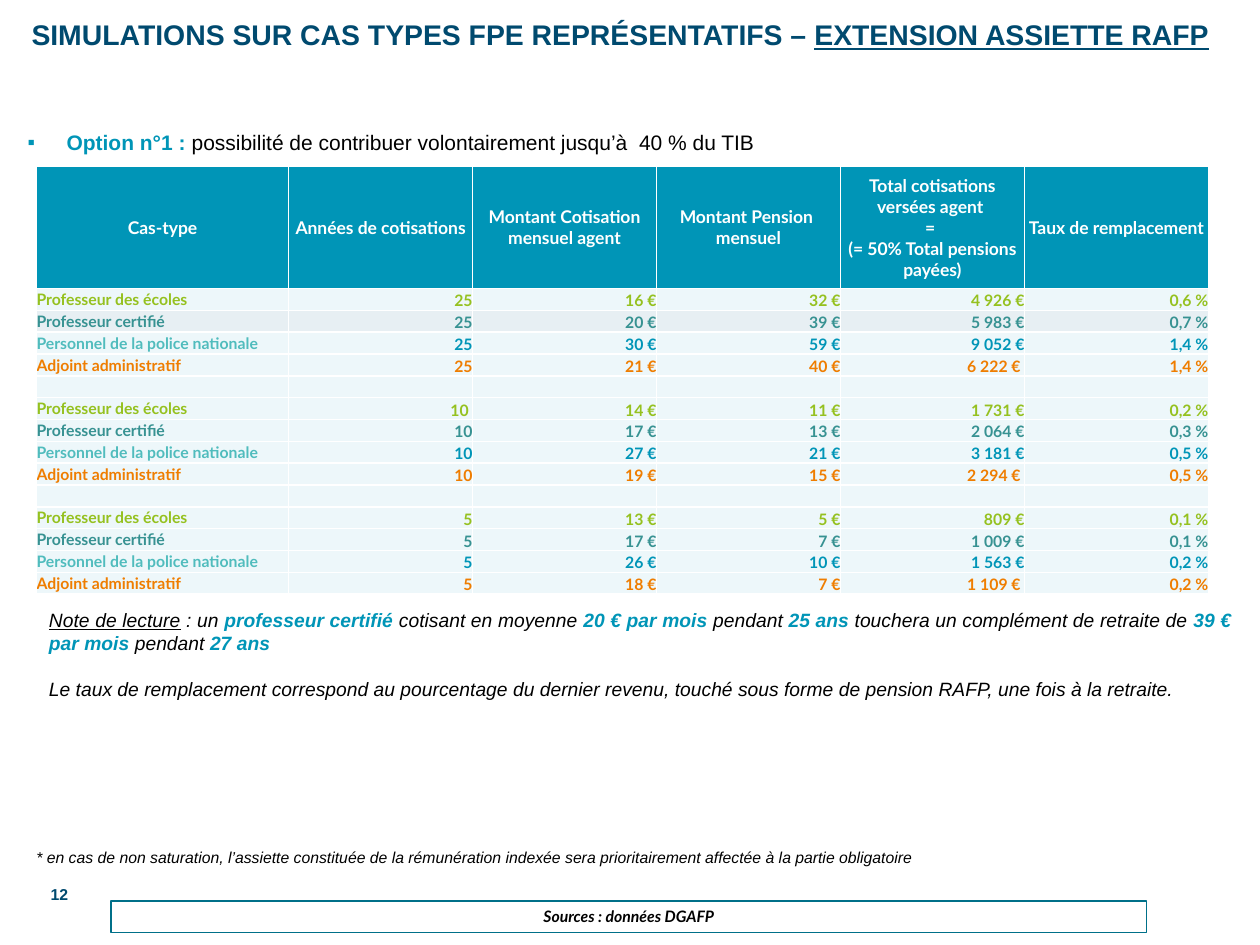
from lxml.etree import SubElement as Sub
from pptx import Presentation
from pptx.dml.color import RGBColor as RGB
from pptx.enum.shapes import MSO_SHAPE as Shape
from pptx.enum.text import MSO_ANCHOR as Anchor, MSO_AUTO_SIZE as Fit, PP_ALIGN as Align
from pptx.oxml import parse_xml
from pptx.oxml.ns import nsdecls, qn
from pptx.util import Inches, Pt

HUES = {"navy": "004A6F", "blue": "0095B7", "line": "007089", "black": "000000",
        "white": "FFFFFF", "pale": "EDF7FA", "grey": "E7EFF3", "lime": "95C11F",
        "green": "379292", "aqua": "50BCBD", "orange": "EF7D00"}

HEADS = ["Cas-type", "Années de cotisations", "Montant Cotisation mensuel agent",
         "Montant Pension \nmensuel",
         "Total cotisations versées agent \n= \n(= 50% Total pensions payées)",
         "Taux de remplacement"]

# Name, colour of the name, colour of the figures
JOBS = [("Professeur des écoles", "lime", "lime"),
        ("Professeur certifié", "green", "green"),
        ("Personnel de la police nationale", "aqua", "blue"),
        ("Adjoint administratif", "orange", "orange")]

# One group per length of contribution, one row per job
GROUPS = [
    [["25", "16 €", "32 €", "4 926 €", "0,6 %"],
     ["25", "20 €", "39 €", "5 983 €", "0,7 %"],
     ["25", "30 €", "59 €", "9 052 €", "1,4 %"],
     ["25", "21 €", "40 €", "6 222 € ", "1,4 %"]],
    [["10 ", "14 €", "11 €", "1 731 €", "0,2 %"],
     ["10", "17 €", "13 €", "2 064 €", "0,3 %"],
     ["10", "27 €", "21 €", "3 181 €", "0,5 %"],
     ["10", "19 €", "15 €", "2 294 € ", "0,5 %"]],
    [["5", "13 €", "5 €", "809 €", "0,1 %"],
     ["5", "17 €", "7 €", "1 009 €", "0,1 %"],
     ["5", "26 €", "10 €", "1 563 €", "0,2 %"],
     ["5", "18 €", "7 €", "1 109 € ", "0,2 %"]],
]

NOTE = [(" : un", False), (" professeur certifié ", True),
        ("cotisant en moyenne ", False), ("20 € par mois ", True),
        ("pendant ", False), ("25 ans ", True),
        ("touchera un complément de retraite de", False),
        (" 39 € par mois ", True), ("pendant ", False), ("27 ans", True)]


def rgb(hue):
    return RGB.from_string(HUES[hue])


def write(para, text, size=9, font="Arial", hue="black", bold=False,
          italic=False, under=False, align=None):
    """Add text to a paragraph; a newline becomes a line break."""
    if align is not None:
        para.alignment = align
    for i, line in enumerate(text.split("\n")):
        if i:
            para.add_line_break()
        run = para.add_run()
        run.text = line
        f = run.font
        f.size, f.name, f.color.rgb = Pt(size), font, rgb(hue)
        f.bold, f.italic, f.underline = bold, italic, under


def add_box(slide, x, y, w, h, anchor=Anchor.TOP):
    box = slide.shapes.add_textbox(Inches(x), Inches(y), Inches(w), Inches(h))
    frame = box.text_frame
    frame.word_wrap, frame.vertical_anchor = True, anchor
    return frame


def add_title(slide):
    title = slide.shapes.title
    title.left, title.top = Inches(0.15), Inches(0.12)
    title.width, title.height = Inches(9.58), Inches(0.31)
    frame = title.text_frame
    frame.auto_size, frame.vertical_anchor = Fit.NONE, Anchor.MIDDLE
    para = frame.paragraphs[0]
    style = dict(size=16.2, hue="navy", bold=True, align=Align.LEFT)
    write(para, "SIMULATIONS SUR CAS TYPES FPE REPRÉSENTATIFS – ", **style)
    write(para, "EXTENSION ASSIETTE RAFP", under=True, **style)


def add_option(slide):
    para = add_box(slide, 0.12, 0.98, 9.92, 0.83).paragraphs[0]
    para.space_before, para.space_after = Pt(6), Pt(4)
    write(para, "Option n°1 : ", size=12, hue="blue", bold=True, align=Align.JUSTIFY)
    write(para, "possibilité de contribuer volontairement jusqu’à  40 % du TIB", size=12)
    props = para._p.get_or_add_pPr()
    props.set("marL", str(Inches(0.31)))
    props.set("indent", str(-Inches(0.31)))
    color = Sub(props, qn("a:buClr"))
    Sub(color, qn("a:srgbClr"), val=HUES["blue"])
    Sub(props, qn("a:buFont"), typeface="Arial")
    Sub(props, qn("a:buChar"), char="▪")


def fill_cell(cell, text, fill, anchor=Anchor.MIDDLE, **style):
    cell.margin_left = cell.margin_right = cell.margin_top = cell.margin_bottom = 0
    cell.vertical_anchor = anchor
    cell.fill.solid()
    cell.fill.fore_color.rgb = rgb(fill)
    para = cell.text_frame.paragraphs[0]
    if text:
        write(para, text, font="Lato", bold=True, **style)
    else:
        Sub(para._p, qn("a:endParaRPr"), sz="900")
    props = cell._tc.get_or_add_tcPr()
    for i, side in enumerate("LRTB"):
        props.insert(i, parse_xml(
            f'<a:ln{side} {nsdecls("a")} w="{Pt(1)}"><a:solidFill>'
            f'<a:srgbClr val="{HUES["white"]}"/></a:solidFill></a:ln{side}>'))


def add_grid(slide):
    count = sum(len(group) for group in GROUPS) + len(GROUPS)
    grid = slide.shapes.add_table(count, len(HEADS), Inches(0.29), Inches(1.32),
                                  Inches(9.3), Inches(3.4)).table
    grid.horz_banding = False
    for i, col in enumerate(grid.columns):
        col.width = Inches(1.46 if i else 2)
    for i, row in enumerate(grid.rows):
        row.height = Inches((3.4 - 0.97) / (count - 1) if i else 0.97)
    for i, head in enumerate(HEADS):
        fill_cell(grid.cell(0, i), head, "blue", size=10, hue="white", align=Align.CENTER)
    r = 1
    for g, group in enumerate(GROUPS):
        if g:
            for c in range(len(HEADS)):
                fill_cell(grid.cell(r, c), "", "pale")
            r += 1
        for (name, tint, hue), nums in zip(JOBS, group):
            fill = "grey" if r == 2 else "pale"
            fill_cell(grid.cell(r, 0), name, fill, hue=tint)
            for c, num in enumerate(nums, 1):
                fill_cell(grid.cell(r, c), num, fill, anchor=Anchor.BOTTOM,
                          hue=hue, align=Align.RIGHT)
            r += 1


def add_note(slide):
    frame = add_box(slide, 0.29, 4.78, 9.58, 1.03)
    style = dict(size=11, italic=True, align=Align.JUSTIFY)
    para = frame.paragraphs[0]
    write(para, "Note de lecture", under=True, **style)
    for text, key in NOTE:
        write(para, text, hue="blue" if key else "black", bold=key, **style)
    para = frame.add_paragraph()
    para.space_before = Pt(13)
    write(para, "Le taux de remplacement correspond au pourcentage du dernier revenu, "
          "touché sous forme de pension RAFP, une fois à la retraite.", **style)


def add_source(slide):
    box = slide.shapes.add_shape(Shape.RECTANGLE, Inches(0.88), Inches(7.15),
                                 Inches(8.22), Inches(0.25))
    box.shadow.inherit = False
    box.fill.background()
    box.line.color.rgb, box.line.width = rgb("line"), Pt(0.75)
    box.text_frame.vertical_anchor = Anchor.MIDDLE
    write(box.text_frame.paragraphs[0], "Sources : données DGAFP", font="Lato",
          bold=True, italic=True, align=Align.CENTER)


def main():
    deck = Presentation()
    deck.slide_width, deck.slide_height = Inches(10), Inches(7.5)
    slide = deck.slides.add_slide(deck.slide_layouts[5])
    add_title(slide)
    add_option(slide)
    add_grid(slide)
    add_note(slide)
    foot = add_box(slide, 0.19, 6.68, 9.58, 0.25)
    write(foot.paragraphs[0], "* en cas de non saturation, l’assiette constituée de la "
          "rémunération indexée sera prioritairement affectée à la partie obligatoire",
          italic=True, align=Align.JUSTIFY)
    page = add_box(slide, 0.04, 6.9, 0.6, 0.4, Anchor.MIDDLE)
    write(page.paragraphs[0], "12", hue="navy", bold=True, align=Align.RIGHT)
    add_source(slide)
    deck.save("out.pptx")


if __name__ == "__main__":
    main()
